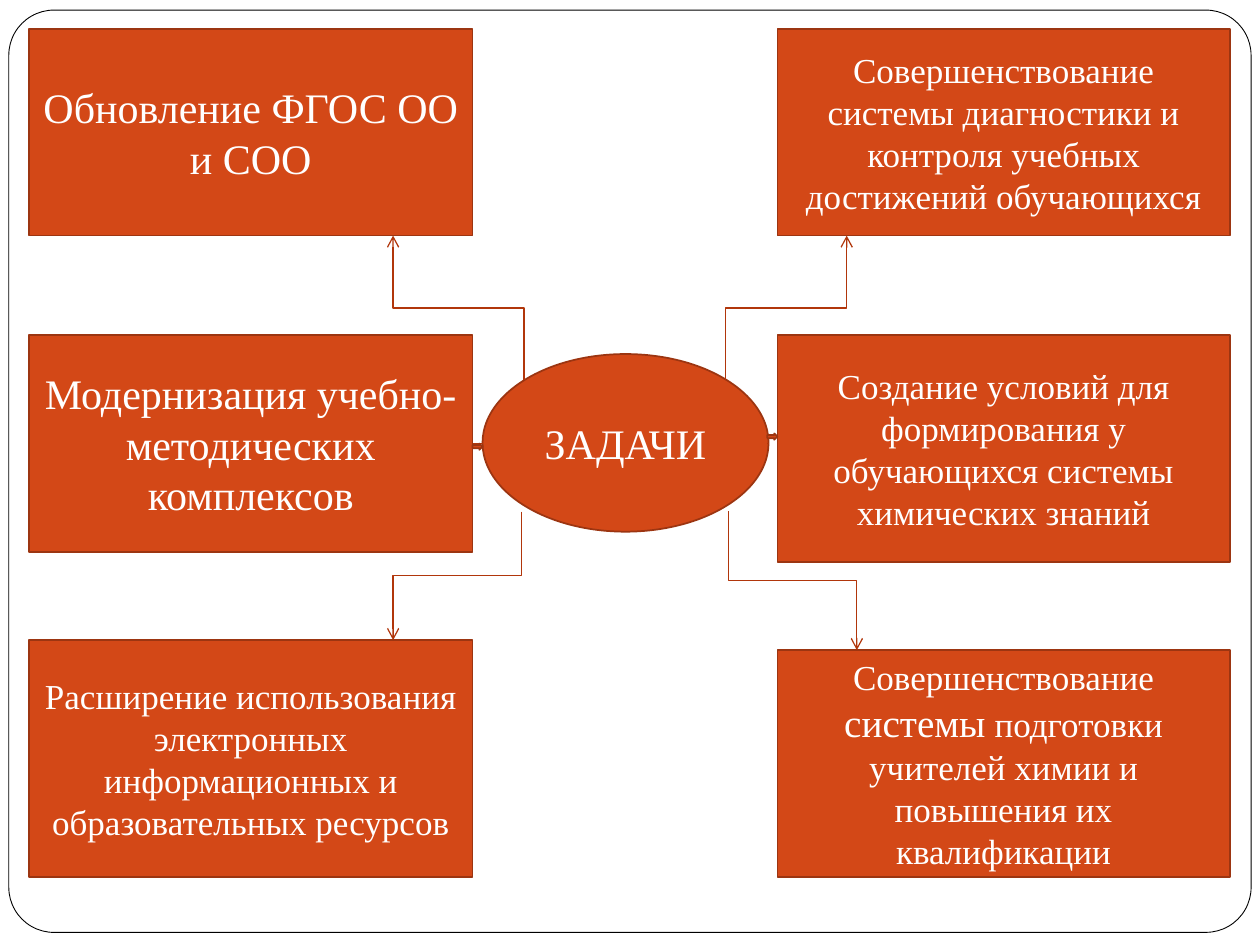
from lxml.etree import SubElement
from pptx import Presentation
from pptx.dml.color import RGBColor
from pptx.enum.shapes import MSO_CONNECTOR as CONNECTOR, MSO_SHAPE as SHAPE
from pptx.enum.text import MSO_ANCHOR as ANCHOR, PP_ALIGN as ALIGN
from pptx.oxml.ns import qn
from pptx.util import Inches, Pt

FONT = "Times New Roman"
FILL, BORDER, ARROW = "D34817", "9C3511", "B1360B"
WHITE, BLACK = "FFFFFF", "000000"

# Two columns of boxes: left edge and width
LEFT_COLUMN, RIGHT_COLUMN = (0.23, 3.52), (6.17, 3.59)

# Column, top, height, font size, text runs (text, own size or None)
TASKS = [
    (LEFT_COLUMN, 0.23, 1.64, 24, [("Обновление ФГОС ОО и СОО", None)]),
    (LEFT_COLUMN, 2.66, 1.72, 24,
     [("Модернизация учебно-методических комплексов", None)]),
    (LEFT_COLUMN, 5.08, 1.88, 20,
     [("Расширение использования электронных информационных и "
       "образовательных ресурсов", None)]),
    (RIGHT_COLUMN, 2.66, 1.8, 20,
     [("Создание условий для формирования у обучающихся системы "
       "химических знаний", None)]),
    (RIGHT_COLUMN, 0.23, 1.64, 20,
     [("Совершенствование системы диагностики и контроля учебных "
       "достижений обучающихся", None)]),
    (RIGHT_COLUMN, 5.16, 1.8, 20,
     [("Совершенствование ", None), ("системы", 22.4),
      (" подготовки учителей химии и повышения их квалификации", None)]),
]

# Start and end of each bent arrow
BENT_ARROWS = [
    ((5.76, 3.02), (6.72, 1.87)),
    ((4.16, 3.02), (3.12, 1.87)),
    ((5.78, 4.06), (6.8, 5.16)),
    ((4.14, 4.06), (3.12, 5.08)),
]


def color(value):
    return RGBColor.from_string(value)


def add_block(slide, kind, left, top, width, height,
              fill=FILL, line=BORDER, weight=1):
    shape = slide.shapes.add_shape(
        kind, Inches(left), Inches(top), Inches(width), Inches(height))
    shape.shadow.inherit = False
    shape.fill.solid()
    shape.fill.fore_color.rgb = color(fill)
    shape.line.color.rgb = color(line)
    shape.line.width = Pt(weight)
    return shape


def write(shape, runs, size=20, ink=WHITE, align=ALIGN.CENTER):
    frame = shape.text_frame
    frame.word_wrap = True
    frame.vertical_anchor = ANCHOR.MIDDLE
    paragraph = frame.paragraphs[0]
    paragraph.alignment = align
    for text, own_size in runs:
        run = paragraph.add_run()
        run.text = text
        run.font.name = FONT
        run.font.size = Pt(own_size or size)
        run.font.color.rgb = color(ink)


def add_line(slide, start, end, kind=CONNECTOR.STRAIGHT):
    connector = slide.shapes.add_connector(
        kind, *(Inches(value) for value in (*start, *end)))
    connector.line.color.rgb = color(ARROW)
    connector.line.width = Pt(0.75)
    SubElement(connector._element.spPr, qn("a:effectLst"))
    return connector


def add_bent_arrow(slide, start, end):
    """Elbow that leaves vertically: a turned connector about its centre."""
    (x1, y1), (x2, y2) = start, end
    rightward, upward = x2 > x1, y2 < y1
    center_x, center_y = (x1 + x2) / 2, (y1 + y2) / 2
    reach_x = abs(y2 - y1) / 2 * (-1 if rightward else 1)
    reach_y = abs(x2 - x1) / 2 * (-1 if upward else 1)
    connector = add_line(slide, (center_x - reach_x, center_y - reach_y),
                         (center_x + reach_x, center_y + reach_y),
                         CONNECTOR.ELBOW)
    turn = 90 if rightward == upward else 270
    connector._element.spPr.find(qn("a:xfrm")).set("rot", str(turn * 60000))
    SubElement(connector.line._get_or_add_ln(), qn("a:tailEnd"), type="arrow")


def main():
    presentation = Presentation()
    presentation.slide_width, presentation.slide_height = Inches(10), Inches(7.5)
    slide = presentation.slides.add_slide(presentation.slide_layouts[6])

    # Rounded frame
    frame = add_block(slide, SHAPE.ROUNDED_RECTANGLE, 0.07, 0.08, 9.86, 7.32,
                      fill=WHITE, line=BLACK, weight=0.5)
    frame.adjustments[0] = 0.049

    # Task boxes around the central ellipse
    boxes = []
    for (left, width), top, height, size, runs in TASKS:
        box = add_block(slide, SHAPE.RECTANGLE, left, top, width, height)
        write(box, runs, size=size)
        boxes.append(box)
    center = add_block(slide, SHAPE.OVAL, 3.83, 2.81, 2.27, 1.41)
    write(center, [("ЗАДАЧИ", None)], size=24)

    # Links to the corner boxes
    for start, end in BENT_ARROWS:
        add_bent_arrow(slide, start, end)

    # Short links to the middle boxes
    left_link = add_line(slide, (3.83, 3.52), (3.75, 3.52))
    left_link.end_connect(boxes[1], 3)
    add_line(slide, (6.09, 3.52), (6.1, 3.52))
    for left, top in ((6.09, 3.44), (3.75, 3.52)):
        add_block(slide, SHAPE.RIGHT_ARROW, left, top, 0.08, 0.05)

    presentation.save("out.pptx")


if __name__ == "__main__":
    main()
